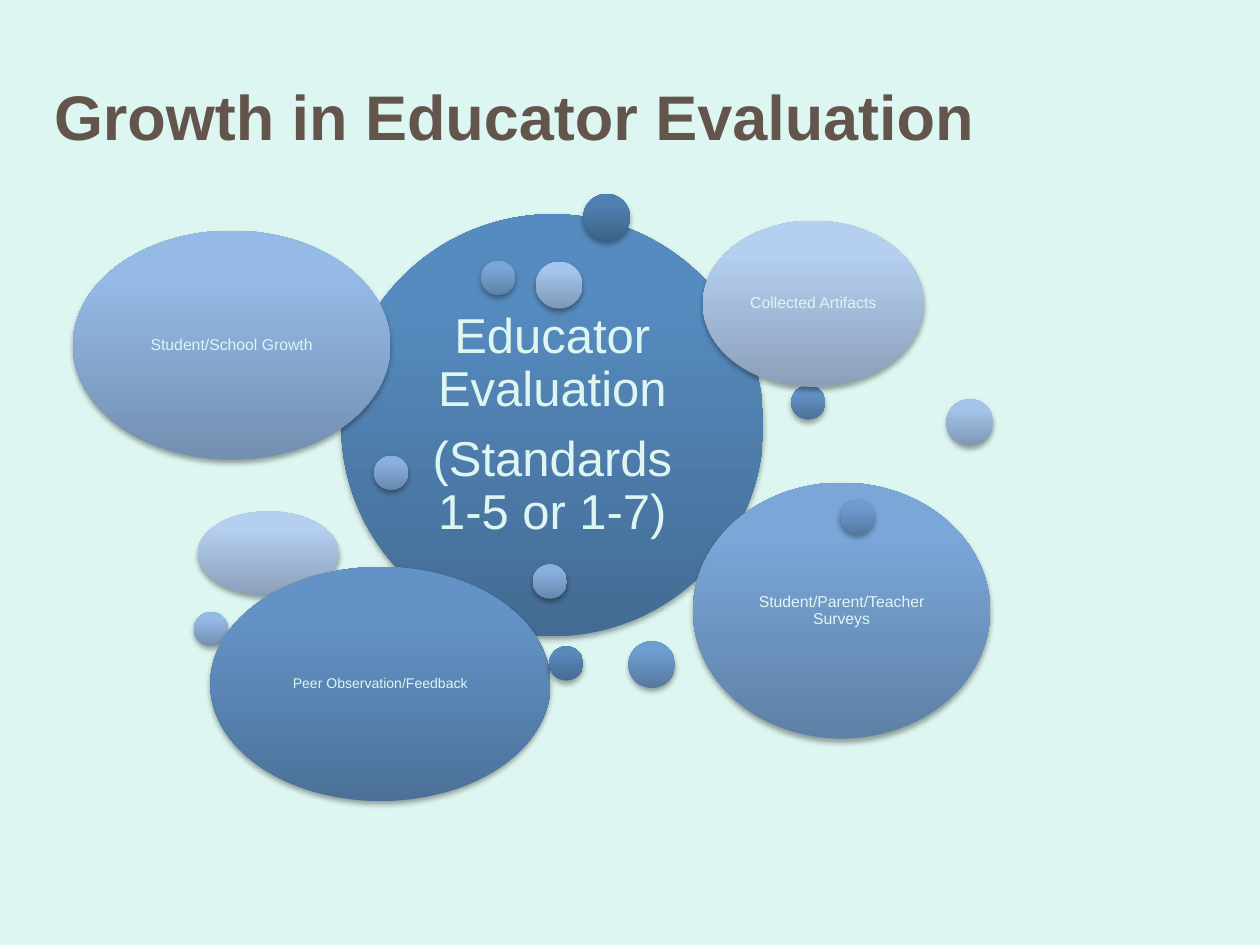
from pptx import Presentation, util as u
from pptx.dml.color import RGBColor
from pptx.enum import shapes, text
from pptx.oxml import parse_xml
from pptx.oxml.ns import nsdecls

COLORS = {"background": "DEF6F1", "title": "63554C", "label": "DEF6F1", "shadow": "000000"}

# Bubble shades: colour at the bottom, near the top and at the top
SHADES = {
    "main": ("436B93", "568BBF", "558CC2"),
    "blue1": ("3D6388", "5080B1", "4E81B3"),
    "blue2": ("456A91", "598ABC", "578ABF"),
    "blue3": ("4C7199", "6393C6", "6294C9"),
    "blue4": ("5579A0", "6E9DD0", "6D9ED3"),
    "blue5": ("5E80A6", "7AA6D8", "79A7DB"),
    "blue6": ("6888AC", "87B0DF", "86B1E2"),
    "blue7": ("738FB1", "95BAE6", "95BBE8"),
    "blue8": ("7F97B5", "A5C4EB", "A4C5EE"),
    "blue9": ("8B9FB9", "B5CFF0", "B4D0F2"),
}
STOPS = (0, 80, 100)
SMALL, LARGE = (0.69, 0.69), (0.94, 0.94)

# Shade, left, top, (width, height) in cm, paragraphs, text size, inset; back to front
BUBBLES = [
    ("main", 6.88, 4.32, (8.51, 8.51),
     ["Educator Evaluation", "(Standards 1-5 or 1-7)"], 28, 0.3),
    ("blue1", 11.76, 3.91, LARGE),
    ("blue2", 9.5, 12.19, SMALL),
    ("blue3", 15.95, 7.77, SMALL),
    ("blue4", 12.67, 12.93, LARGE),
    ("blue5", 9.7, 5.26, SMALL),
    ("blue6", 7.54, 9.19, SMALL),
    ("blue7", 1.47, 4.65, (6.4, 4.62), ["Student/School Growth"], 9, 0.1),
    ("blue8", 10.8, 5.28, LARGE),
    ("blue9", 3.99, 10.31, (2.84, 1.7)),
    ("blue9", 14.17, 4.45, (4.45, 3.35), ["Collected Artifacts"], 9, 0.1),
    ("blue8", 19.08, 8.05, LARGE),
    ("blue7", 3.91, 12.34, SMALL),
    ("blue6", 10.74, 11.38, SMALL),
    ("blue5", 13.97, 9.73, (5.99, 5.16), ["Student/Parent/Teacher Surveys"], 9, 0.1),
    ("blue4", 16.94, 10.08, SMALL),
    ("blue3", 4.24, 11.43, (6.86, 4.72), ["Peer Observation/Feedback"], 8, 0.08),
    ("blue2", 11.07, 13.03, SMALL),
]


def write(tf, paragraphs, size, color, bold=False, align=text.PP_ALIGN.LEFT,
          inset=None, line=1.0, after=0):
    tf.word_wrap = True
    tf.vertical_anchor = text.MSO_ANCHOR.MIDDLE
    if inset is not None:
        tf.margin_left = tf.margin_right = tf.margin_top = tf.margin_bottom = u.Cm(inset)
    for i, words in enumerate(paragraphs):
        p = tf.add_paragraph() if i else tf.paragraphs[0]
        p.alignment, p.line_spacing, p.space_after = align, line, u.Pt(after)
        r = p.add_run()
        r.text = words
        r.font.name, r.font.size, r.font.bold = "Arial", u.Pt(size), bold
        r.font.color.rgb = RGBColor.from_string(color)


class Deck:
    def __init__(self):
        self.prs = Presentation()
        self.prs.slide_width, self.prs.slide_height = u.Cm(25.4), u.Cm(19.05)
        self.s = self.prs.slides.add_slide(self.prs.slide_layouts[6])
        fill = self.s.background.fill
        fill.solid()
        fill.fore_color.rgb = RGBColor.from_string(COLORS["background"])

    def title(self, words, *box):
        tb = self.s.shapes.add_textbox(*map(u.Cm, box))
        write(tb.text_frame, [words], 36, COLORS["title"], bold=True)

    def bubble(self, shade, left, top, size, paragraphs=(), pt=9, inset=0.1):
        sp = self.s.shapes.add_shape(shapes.MSO_SHAPE.OVAL, *map(u.Cm, (left, top, *size)))
        sp.line.fill.background()
        # Gradient running upwards
        stops = "".join(f'<a:gs pos="{pos * 1000}"><a:srgbClr val="{c}"/></a:gs>'
                        for pos, c in zip(STOPS, SHADES[shade]))
        sp._element.spPr.find("{*}prstGeom").addnext(parse_xml(
            f'<a:gradFill {nsdecls("a")} rotWithShape="1"><a:gsLst>{stops}</a:gsLst>'
            '<a:lin ang="16200000" scaled="0"/></a:gradFill>'))
        # Soft shadow straight below
        sp._element.spPr.append(parse_xml(
            f'<a:effectLst {nsdecls("a")}><a:outerShdw blurRad="{u.Pt(3.1)}" '
            f'dist="{u.Pt(1.8)}" dir="5400000" rotWithShape="0">'
            f'<a:srgbClr val="{COLORS["shadow"]}"><a:alpha val="35000"/></a:srgbClr>'
            '</a:outerShdw></a:effectLst>'))
        if paragraphs:
            write(sp.text_frame, paragraphs, pt, COLORS["label"], inset=inset,
                  align=text.PP_ALIGN.CENTER, line=0.9, after=pt * 0.35)


def main():
    deck = Deck()
    deck.title("Growth in Educator Evaluation", 0.84, 0.84, 23.7, 2.97)
    for bubble in BUBBLES:
        deck.bubble(*bubble)
    deck.prs.save("out.pptx")


if __name__ == "__main__":
    main()
